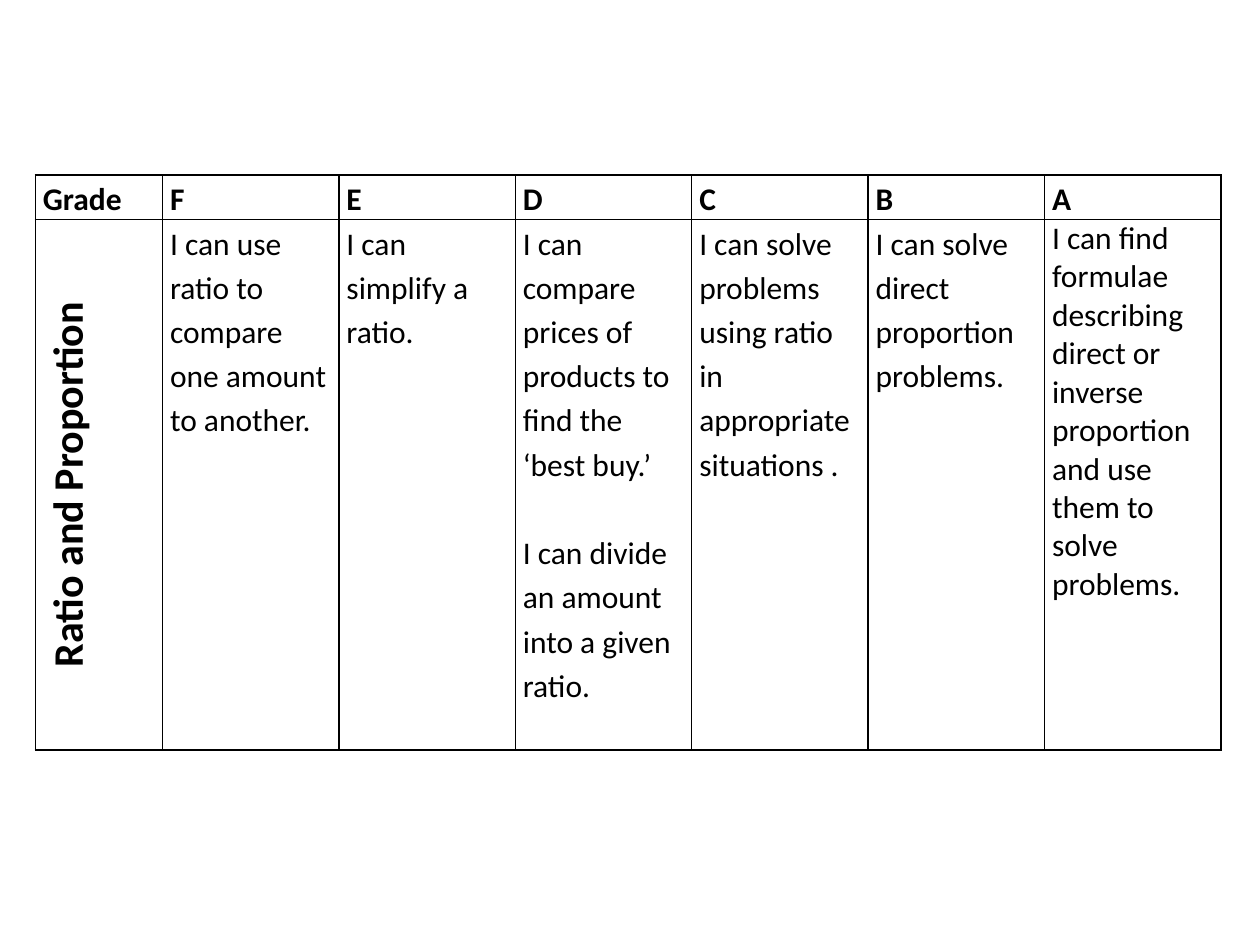
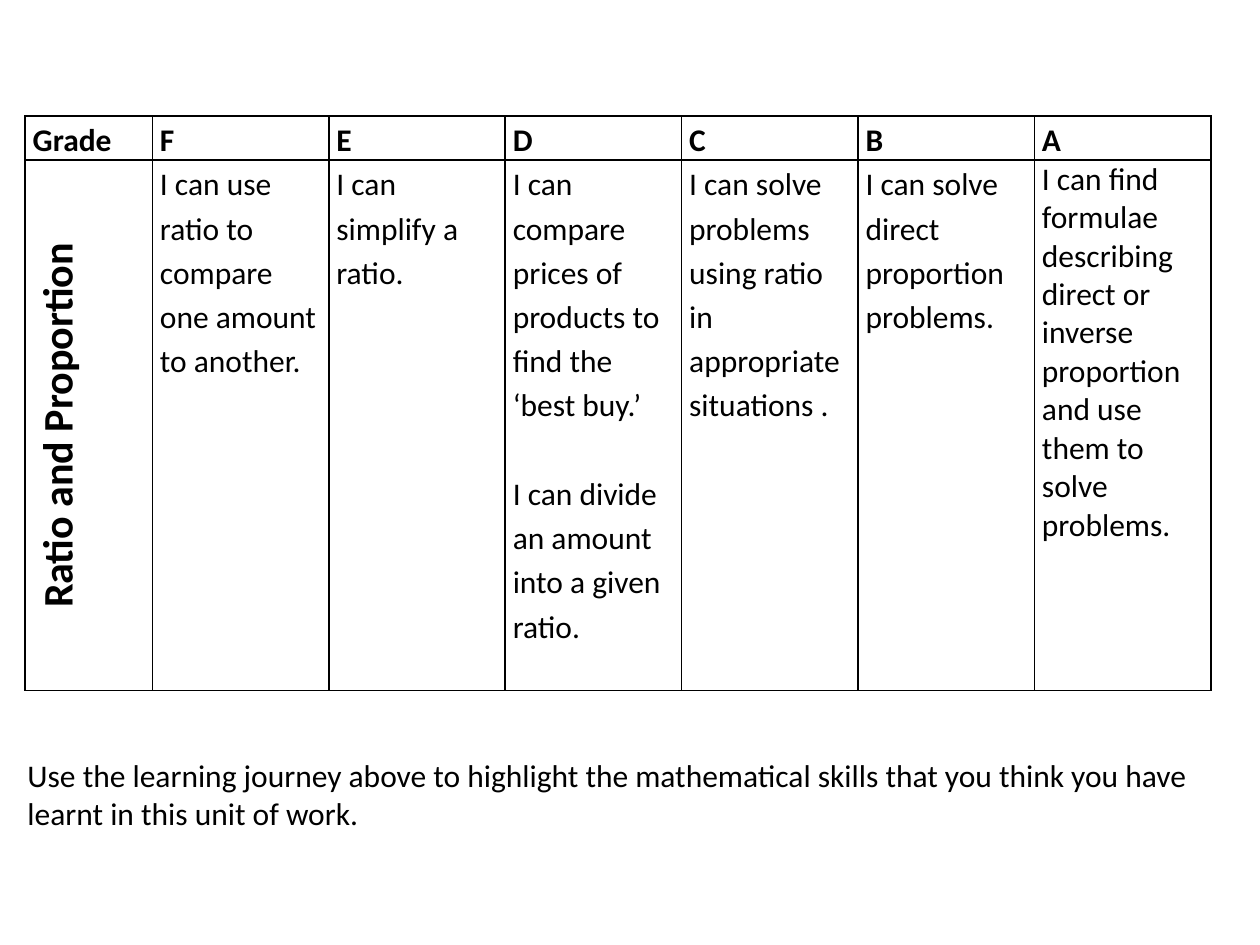
"""Build two slides that show the ratio and proportion learning journey."""

import dataclasses
import typing

import pptx
import pptx.enum.text
import pptx.oxml
import pptx.oxml.ns
import pptx.util
from pptx.dml.color import RGBColor

COLOURS = {"ink": "000000"}
FONT = "Calibri"
BODY_SIZE = 18
TOPIC_SIZE = 24
LOOSE = 1.15
SKIPPED_LINE = 25.3
GRID_COLUMNS, GRID_ROWS = 100, 75
CELL_MARGIN = 0.6
GRADE_WIDTH, SKILL_WIDTH = 10.1, 14
HEADER_HEIGHT, SKILL_HEIGHT = 3.5, 42.1
CENTRE = pptx.enum.text.PP_ALIGN.CENTER


@dataclasses.dataclass(frozen=True)
class Step:
    """A grade and the skills that belong to it."""

    grade: str
    skills: tuple[str, ...]
    spacing: float = LOOSE
    gap: float = 0


@dataclasses.dataclass(frozen=True)
class Journey:
    """The place of the table on a page, in grid units, and its instruction."""

    left: float
    top: float
    instruction: str = ""


STEPS = (
    Step("F", ("I can use ratio to compare one amount to another.",)),
    Step("E", ("I can simplify a ratio.",)),
    Step("D", ("I can compare prices of products to find the ‘best buy.’",
               "I can divide an amount into a given ratio."), gap=SKIPPED_LINE),
    Step("C", ("I can solve problems using ratio in appropriate situations .",)),
    Step("B", ("I can solve direct proportion", "problems.")),
    Step("A", ("I can find formulae describing direct or inverse proportion "
               "and use them to solve problems.",), spacing=1),
)
JOURNEYS = (
    Journey(2.8, 13.9),
    Journey(2, 9.2, "Use the learning journey above to highlight the mathematical "
                    "skills that you think you have learnt in this unit of work."),
)


def across(columns: float) -> int:
    """Return the width of some grid columns."""
    return pptx.util.Inches(10 * columns / GRID_COLUMNS)


def down(rows: float) -> int:
    """Return the height of some grid rows."""
    return pptx.util.Inches(7.5 * rows / GRID_ROWS)


def write(frame: typing.Any, *texts: str, size: float = BODY_SIZE, bold: bool = False,
          spacing: float = 1, gap: float = 0, align: typing.Any = None) -> None:
    """Write each text as a paragraph, with a gap between paragraphs."""
    frame.word_wrap = True
    for index, text in enumerate(texts):
        para = frame.add_paragraph() if index else frame.paragraphs[0]
        para.alignment = align
        para.line_spacing = spacing
        para.space_before = pptx.util.Pt(gap if index else 0)
        span = para.add_run()
        span.text = text
        span.font.name = FONT
        span.font.size = pptx.util.Pt(size)
        span.font.bold = bold
        span.font.color.rgb = RGBColor.from_string(COLOURS["ink"])


def format_cell(cell: typing.Any) -> None:
    """Give a cell narrow margins, no fill and a thin border."""
    cell.margin_left = cell.margin_right = across(CELL_MARGIN)
    cell.margin_top = cell.margin_bottom = 0
    cell.fill.background()
    properties = cell._tc.get_or_add_tcPr()
    for index, side in enumerate(("lnL", "lnR", "lnT", "lnB")):
        properties.insert(index, pptx.oxml.parse_xml(
            f'<a:{side} {pptx.oxml.ns.nsdecls("a")} w="{pptx.util.Pt(1)}">'
            f'<a:solidFill><a:srgbClr val="{COLOURS["ink"]}"/></a:solidFill></a:{side}>'))


def draw_table(page: typing.Any, journey: Journey) -> None:
    """Draw the table of grades and skills."""
    widths = [GRADE_WIDTH] + [SKILL_WIDTH] * len(STEPS)
    heights = [HEADER_HEIGHT, SKILL_HEIGHT]
    table = page.shapes.add_table(
        len(heights), len(widths), across(journey.left), down(journey.top),
        across(sum(widths)), down(sum(heights))).table
    table.first_row = table.horz_banding = False
    for column, width in zip(table.columns, widths):
        column.width = across(width)
    for row, height in zip(table.rows, heights):
        row.height = down(height)
    for cell in table.iter_cells():
        format_cell(cell)
    for index, grade in enumerate(["Grade"] + [step.grade for step in STEPS]):
        write(table.cell(0, index).text_frame, grade, bold=True, spacing=LOOSE)
    topic = table.cell(1, 0)
    topic._tc.get_or_add_tcPr().set("vert", "vert270")
    write(topic.text_frame, "Ratio and Proportion", size=TOPIC_SIZE, bold=True,
          spacing=LOOSE, align=CENTRE)
    for index, step in enumerate(STEPS, start=1):
        write(table.cell(1, index).text_frame, *step.skills,
              spacing=step.spacing, gap=step.gap)


def draw_instruction(page: typing.Any, text: str) -> None:
    """Draw the instruction below the table."""
    box = page.shapes.add_textbox(across(1.2), down(59.5), across(97.6), down(10.1))
    write(box.text_frame, text)


def main() -> None:
    """Build and save the deck."""
    deck = pptx.Presentation()
    deck.slide_width, deck.slide_height = across(GRID_COLUMNS), down(GRID_ROWS)
    for journey in JOURNEYS:
        page = deck.slides.add_slide(deck.slide_layouts.get_by_name("Blank"))
        draw_table(page, journey)
        if journey.instruction:
            draw_instruction(page, journey.instruction)
    deck.save("out.pptx")


if __name__ == "__main__":
    main()
